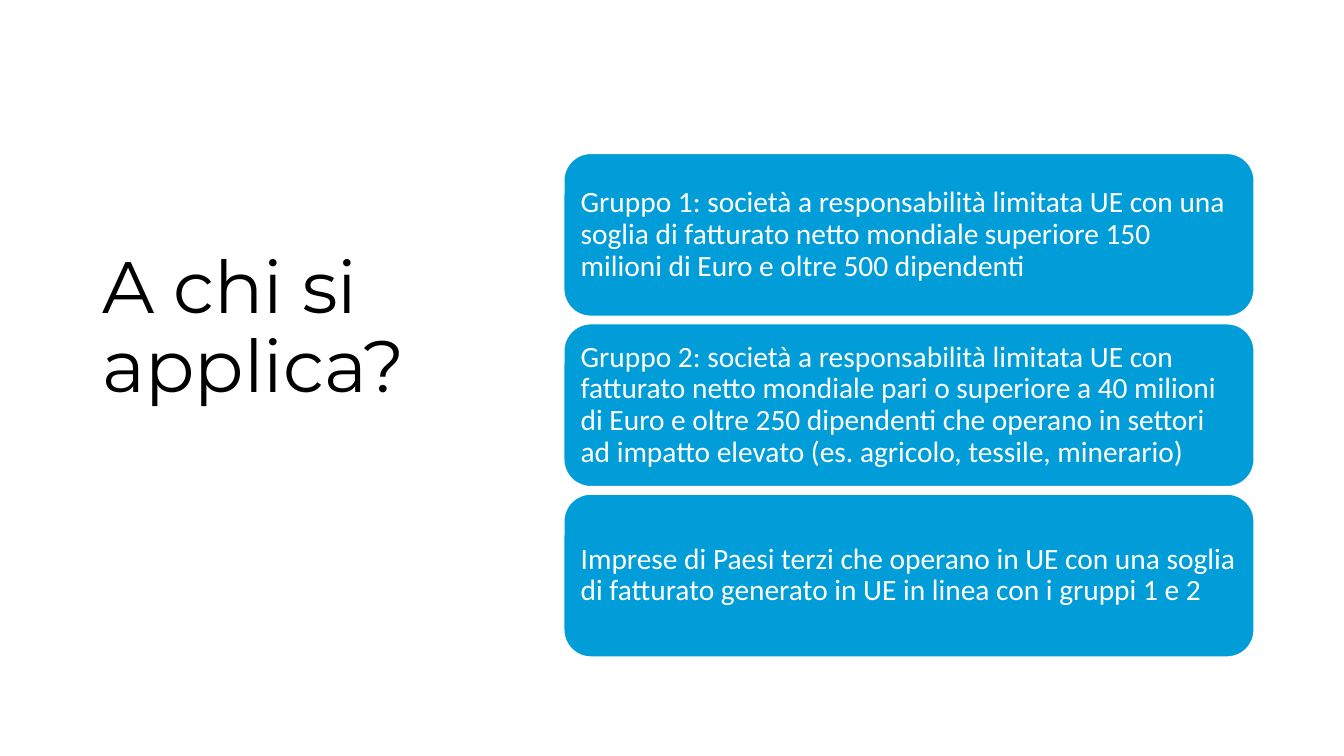
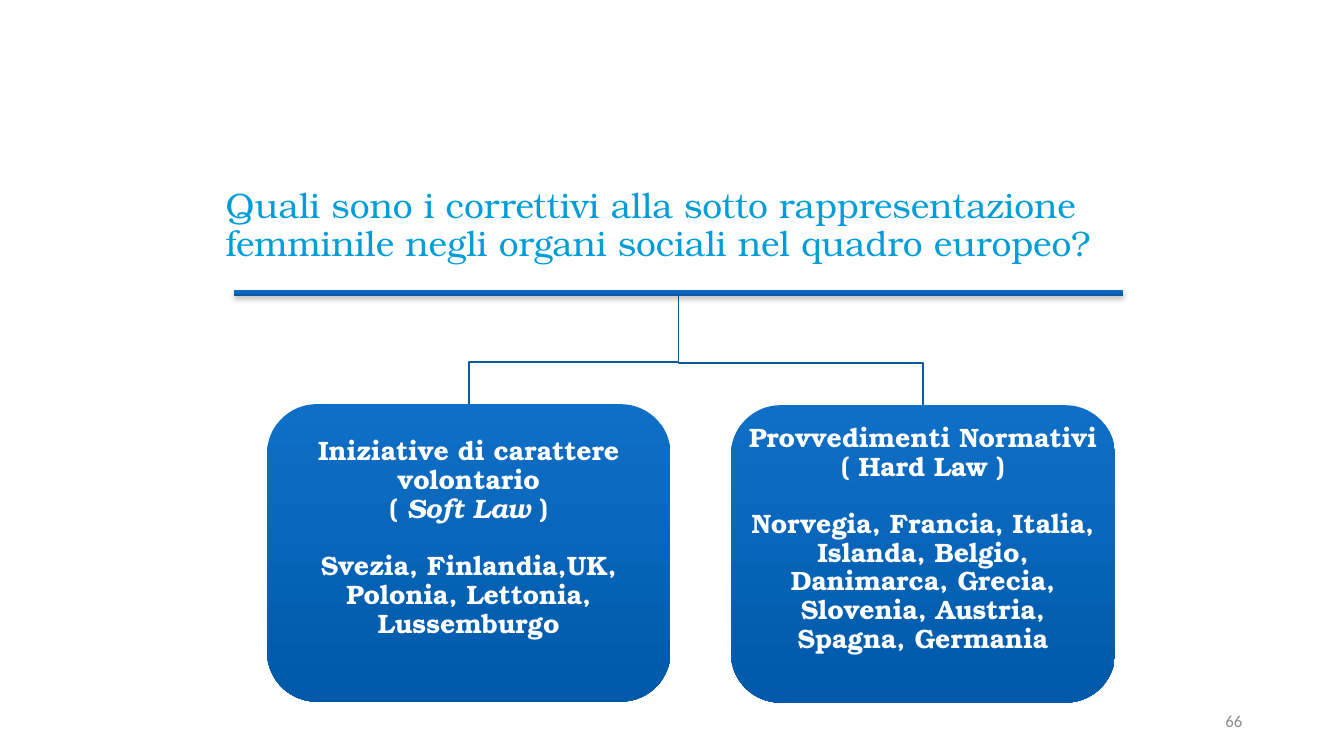
from lxml import etree
from pptx import Presentation
from pptx.dml.color import RGBColor
from pptx.enum.shapes import MSO_SHAPE
from pptx.enum.text import MSO_ANCHOR, PP_ALIGN
from pptx.oxml.ns import qn
from pptx.util import Inches, Pt

ROUNDED, RECT = MSO_SHAPE.ROUNDED_RECTANGLE, MSO_SHAPE.RECTANGLE
MIDDLE = MSO_ANCHOR.MIDDLE
LEFT, CENTER, RIGHT = PP_ALIGN.LEFT, PP_ALIGN.CENTER, PP_ALIGN.RIGHT

BLACK = RGBColor(0x00, 0x00, 0x00)
WHITE = RGBColor(0xFF, 0xFF, 0xFF)
CYAN = RGBColor(0x00, 0x9D, 0xD9)
BLUE = RGBColor(0x0F, 0x6F, 0xC6)
DEEP_BLUE = RGBColor(0x00, 0x59, 0xA9)
LINE_BLUE = RGBColor(0x0C, 0x59, 0x9F)
GREY = RGBColor(0x8C, 0x8C, 0x8C)

SANS, DISPLAY, SERIF = "Calibri", "Montserrat", "TeX Gyre Bonum"
BIG_TITLE = {"name": DISPLAY, "size": Pt(52), "color": BLACK}
SERIF_TITLE = {"name": SERIF, "size": Pt(25.2), "color": CYAN}
CARD_TEXT = {"name": SANS, "size": Pt(21), "color": WHITE}
NODE_TEXT = {"name": SERIF, "size": Pt(19), "color": WHITE, "bold": True}
NUMBER_TEXT = {"name": SANS, "size": Pt(12), "color": GREY}

GROUPS = [
    "Gruppo 1: società a responsabilità limitata UE con una soglia di fatturato "
    "netto mondiale superiore 150 milioni di Euro e oltre 500 dipendenti",
    "Gruppo 2: società a responsabilità limitata UE con fatturato netto mondiale "
    "pari o superiore a 40 milioni di Euro e oltre 250 dipendenti che operano in "
    "settori ad impatto elevato (es. agricolo, tessile, minerario)",
    "Imprese di Paesi terzi che operano in UE con una soglia di fatturato "
    "generato in UE in linea con i gruppi 1 e 2",
]
MEASURES = [
    (2.65, 4.01, 4,
     [["Iniziative di carattere volontario"],
      ["( ", ("Soft Law ", {"italic": True}), ")"],
      ["Svezia, Finlandia,UK, Polonia, Lettonia, Lussemburgo"]]),
    (7.25, 4.02, 3.81,
     [["Provvedimenti Normativi"],
      ["( Hard Law )"],
      ["Norvegia, Francia, Italia, Islanda, Belgio, Danimarca, Grecia, "
       "Slovenia, Austria, Spagna, Germania"]]),
]


class Deck:
    """Holds the shared style and the current slide."""

    def __init__(self):
        self.prs = Presentation()
        self.prs.slide_width = Inches(13.33)
        self.prs.slide_height = Inches(7.5)
        self.s = None

    def new_slide(self):
        self.s = self.prs.slides.add_slide(self.prs.slide_layouts[6])

    def fill_text(self, sp, paragraphs, style, align=LEFT, spacing=0.9, insets=None):
        tf = sp.text_frame
        frame = {"word_wrap": True, "vertical_anchor": MIDDLE}
        if insets:
            sides = ("margin_left", "margin_top", "margin_right", "margin_bottom")
            frame.update(zip(sides, map(Inches, insets)))
        for key, value in frame.items():
            setattr(tf, key, value)
        for i, runs in enumerate(paragraphs):
            p = tf.paragraphs[0] if i == 0 else tf.add_paragraph()
            p.alignment, p.line_spacing = align, spacing
            for run in runs:
                text, extra = run if isinstance(run, tuple) else (run, {})
                r = p.add_run()
                r.text = text
                for key, value in {**style, **extra}.items():
                    if key == "color":
                        r.font.color.rgb = value
                    else:
                        setattr(r.font, key, value)
        return tf

    def text(self, x, y, w, h, text, style, align=LEFT, spacing=0.9):
        sp = self.s.shapes.add_textbox(Inches(x), Inches(y), Inches(w), Inches(h))
        self.fill_text(sp, [[text]], style, align, spacing)

    def shape(self, kind, x, y, w, h):
        sp = self.s.shapes.add_shape(kind, Inches(x), Inches(y), Inches(w), Inches(h))
        sp.shadow.inherit = False
        return sp

    def card(self, x, y, w, h, text):
        sp = self.shape(ROUNDED, x, y, w, h)
        sp.fill.solid()
        sp.fill.fore_color.rgb = CYAN
        sp.line.color.rgb = WHITE
        sp.line.width = Pt(1.25)
        self.fill_text(sp, [[text]], CARD_TEXT, insets=[0.09] * 4)

    def gradient(self, kind, x, y, w, h):
        sp = self.shape(kind, x, y, w, h)
        sp.line.fill.background()
        sp.fill.gradient()
        sp.fill.gradient_angle = 270
        for stop, position, color in zip(sp.fill.gradient_stops, (0, 1), (BLUE, DEEP_BLUE)):
            stop.position = position
            stop.color.rgb = color
        return sp

    def bar(self, x, y, w, h):
        sp = self.gradient(RECT, x, y, w, h)
        effects = sp.element.spPr.find(qn("a:effectLst"))
        shadow = etree.SubElement(effects, qn("a:outerShdw"), blurRad=str(Pt(4)),
                                  dist=str(Pt(2)), dir="5400000", rotWithShape="0")
        color = etree.SubElement(shadow, qn("a:srgbClr"), val=str(BLACK))
        etree.SubElement(color, qn("a:alpha"), val="28000")

    def node(self, x, y, w, h, paragraphs):
        sp = self.gradient(ROUNDED, x, y, w, h)
        tf = self.fill_text(sp, paragraphs, NODE_TEXT, CENTER, insets=(0.01, 0.01, 0.01, 0.3))
        tf.paragraphs[-1].space_before = Pt(20.5)

    def branch(self, x1, y1, x2, y2, drop):
        bend = y2 - drop
        points = [(Inches(x), Inches(y)) for x, y in ((x1, bend), (x2, bend), (x2, y2))]
        builder = self.s.shapes.build_freeform(Inches(x1), Inches(y1))
        builder.add_line_segments(points, close=False)
        sp = builder.convert_to_shape()
        sp.shadow.inherit = False
        sp.fill.background()
        sp.line.color.rgb = LINE_BLUE
        sp.line.width = Pt(1.25)

    def page_number(self, number):
        self.text(9.42, 6.95, 3, 0.4, number, NUMBER_TEXT, RIGHT, 1)


def scope_slide(deck):
    deck.new_slide()
    deck.text(0.92, 0.61, 3.69, 5.31, "A chi si applica?", BIG_TITLE)
    height, gap = 1.62, 0.07
    for i, group in enumerate(GROUPS):
        deck.card(5.59, 1.52 + i * (height + gap), 6.85, height, group)


def measures_slide(deck):
    deck.new_slide()
    deck.text(2.14, 1.73, 9, 1.02,
              "Quali sono i correttivi alla sotto rappresentazione femminile "
              "negli organi sociali nel quadro europeo?", SERIF_TITLE)
    bar_x, bar_y, bar_w, bar_h = 2.32, 2.88, 8.82, 0.05
    for x, y, w, _ in MEASURES:
        deck.branch(bar_x + bar_w / 2, bar_y + bar_h, x + w / 2, y, 0.42)
    deck.bar(bar_x, bar_y, bar_w, bar_h)
    for x, y, w, paragraphs in MEASURES:
        deck.node(x, y, w, 2.95, paragraphs)
    deck.page_number("66")


def main():
    deck = Deck()
    scope_slide(deck)
    measures_slide(deck)
    deck.prs.save("out.pptx")


if __name__ == "__main__":
    main()
